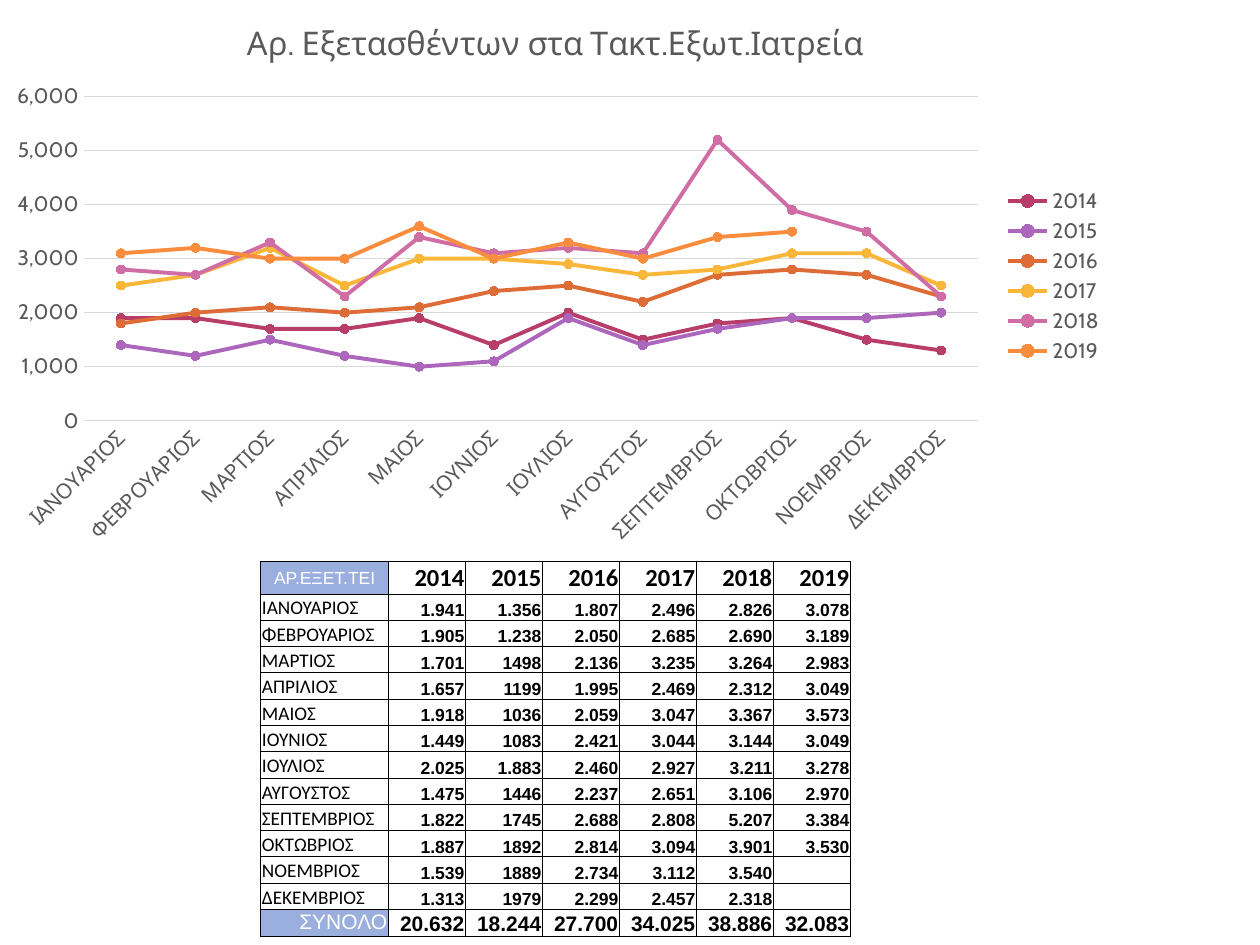
from lxml.etree import SubElement
from pptx import Presentation
from pptx.chart.data import CategoryChartData as ChartData
from pptx.dml.color import RGBColor
from pptx.enum.chart import XL_CHART_TYPE as CT, XL_LEGEND_POSITION as LP
from pptx.enum.chart import XL_MARKER_STYLE as MS, XL_TICK_MARK as TM
from pptx.enum.text import MSO_ANCHOR as MA, PP_ALIGN as PA
from pptx.oxml.ns import qn
from pptx.util import Pt

TITLE = "Αρ. Εξετασθέντων στα Τακτ.Εξωτ.Ιατρεία"
HEADER = ["ΑΡ.ΕΞΕΤ.ΤΕΙ", "2014", "2015", "2016", "2017", "2018", "2019"]
MONTHS = [
    ["ΙΑΝΟΥΑΡΙΟΣ", "1.941", "1.356", "1.807", "2.496", "2.826", "3.078"],
    ["ΦΕΒΡΟΥΑΡΙΟΣ", "1.905", "1.238", "2.050", "2.685", "2.690", "3.189"],
    ["ΜΑΡΤΙΟΣ", "1.701", "1498", "2.136", "3.235", "3.264", "2.983"],
    ["ΑΠΡΙΛΙΟΣ", "1.657", "1199", "1.995", "2.469", "2.312", "3.049"],
    ["ΜΑΙΟΣ", "1.918", "1036", "2.059", "3.047", "3.367", "3.573"],
    ["ΙΟΥΝΙΟΣ", "1.449", "1083", "2.421", "3.044", "3.144", "3.049"],
    ["ΙΟΥΛΙΟΣ", "2.025", "1.883", "2.460", "2.927", "3.211", "3.278"],
    ["ΑΥΓΟΥΣΤΟΣ", "1.475", "1446", "2.237", "2.651", "3.106", "2.970"],
    ["ΣΕΠΤΕΜΒΡΙΟΣ", "1.822", "1745", "2.688", "2.808", "5.207", "3.384"],
    ["ΟΚΤΩΒΡΙΟΣ", "1.887", "1892", "2.814", "3.094", "3.901", "3.530"],
    ["ΝΟΕΜΒΡΙΟΣ", "1.539", "1889", "2.734", "3.112", "3.540", ""],
    ["ΔΕΚΕΜΒΡΙΟΣ", "1.313", "1979", "2.299", "2.457", "2.318", ""],
]
TOTALS = ["ΣΥΝΟΛΟ", "20.632", "18.244", "27.700", "34.025", "38.886", "32.083"]
COLORS = ["B83D68", "AC66BB", "DE6C36", "F9B639", "CF6DA4", "FA8D3D"]
GREY, RULE, BLUE = "595959", "D9D9D9", "9BAFDE"


def rgb(color):
    return RGBColor.from_string(color)


def style_font(font, name, size, color, bold=False):
    font.name, font.size, font.bold = name, Pt(size), bold
    font.color.rgb = rgb(color)


def style_line(line, color, width):
    line.color.rgb = rgb(color)
    line.width = Pt(width)


def hundreds(text):
    return round(int(text.replace(".", "")), -2) if text else None


def style_axis(axis):
    axis.major_tick_mark = axis.minor_tick_mark = TM.NONE
    style_font(axis.tick_labels.font, "Cabin", 12, GREY)


def style_series(series, color):
    series.smooth = False
    style_line(series.format.line, color, 2.25)
    marker = series.marker
    marker.style, marker.size = MS.CIRCLE, 5
    marker.format.fill.solid()
    marker.format.fill.fore_color.rgb = rgb(color)
    style_line(marker.format.line, color, 0.75)


def add_visits_chart(s):
    data = ChartData(number_format="#,##0")
    data.categories = [row[0] for row in MONTHS]
    for i, year in enumerate(HEADER[1:], 1):
        data.add_series(year, [hundreds(row[i]) for row in MONTHS])
    chart = s.shapes.add_chart(CT.LINE_MARKERS, Pt(-3), Pt(-2.2), Pt(640.8), Pt(319.8), data).chart
    style_font(chart.font, "Cabin", 10, "000000")

    chart.has_title = True
    r = chart.chart_title.text_frame.paragraphs[0].add_run()
    r.text = TITLE
    style_font(r.font, "Cabin", 18.6, GREY)

    chart.has_legend = True
    chart.legend.position = LP.RIGHT
    chart.legend.include_in_layout = False
    style_font(chart.legend.font, "Cabin", 12, GREY)

    months, values = chart.category_axis, chart.value_axis
    style_axis(months)
    style_line(months.format.line, RULE, 0.75)
    months._element.find(qn("c:txPr")).find(qn("a:bodyPr")).set("rot", "-2700000")
    style_axis(values)
    values.format.line.fill.background()
    values.minimum_scale, values.maximum_scale, values.major_unit = 0, 6000, 1000
    values.tick_labels.number_format = "#,##0"
    values.tick_labels.number_format_is_linked = False
    style_line(values.major_gridlines.format.line, RULE, 0.75)

    chart.plots[0].vary_by_categories = False
    for series, color in zip(chart.plots[0].series, COLORS):
        style_series(series, color)


def add_borders(cell):
    tc_pr = cell._tc.get_or_add_tcPr()
    for side in ("lnL", "lnR", "lnT", "lnB"):
        ln = SubElement(tc_pr, qn(f"a:{side}"), w=str(Pt(0.5)))
        fill = SubElement(ln, qn("a:solidFill"))
        SubElement(fill, qn("a:srgbClr"), val="000000")


def fill_cell(cell, text, font, align=PA.RIGHT, anchor=MA.BOTTOM, fill=None):
    add_borders(cell)
    if fill:
        cell.fill.solid()
        cell.fill.fore_color.rgb = rgb(fill)
    else:
        cell.fill.background()
    cell.margin_left = cell.margin_right = cell.margin_top = Pt(0.7)
    cell.margin_bottom = 0
    cell.vertical_anchor = anchor
    p = cell.text_frame.paragraphs[0]
    p.alignment = align
    if text:
        r = p.add_run()
        r.text = text
        style_font(r.font, *font)
    else:
        SubElement(p._p, qn("a:endParaRPr"), sz=str(font[1] * 100))


def fill_row(table, i, texts, label, value):
    for j, text in enumerate(texts):
        fill_cell(table.cell(i, j), text, **(value if j else label))


def add_visits_table(s):
    n = len(MONTHS) + 2
    heights = [18.9] + [15.05] * len(MONTHS) + [15.4]
    widths = [73] + [44] * 6
    table = s.shapes.add_table(n, 7, Pt(149), Pt(320.5), Pt(sum(widths)), Pt(sum(heights))).table
    table.first_row = table.horz_banding = False
    for column, width in zip(table.columns, widths):
        column.width = Pt(width)
    for row, height in zip(table.rows, heights):
        row.height = Pt(height)

    fill_row(table, 0, HEADER,
             dict(font=("Arial", 10, "FFFFFF"), align=PA.CENTER, anchor=MA.MIDDLE, fill=BLUE),
             dict(font=("Calibri", 14, "000000", True), anchor=MA.MIDDLE))
    for i, texts in enumerate(MONTHS, 1):
        fill_row(table, i, texts,
                 dict(font=("Calibri", 11, "000000"), align=PA.LEFT),
                 dict(font=("Arial", 10, "000000", True)))
    fill_row(table, n - 1, TOTALS,
             dict(font=("Arial", 12, "FFFFFF"), anchor=MA.TOP, fill=BLUE),
             dict(font=("Arial", 12, "000000", True)))


def main():
    prs = Presentation()
    prs.slide_width, prs.slide_height = Pt(720), Pt(540)
    s = prs.slides.add_slide(prs.slide_layouts[6])
    add_visits_chart(s)
    add_visits_table(s)
    prs.save("out.pptx")


if __name__ == "__main__":
    main()
